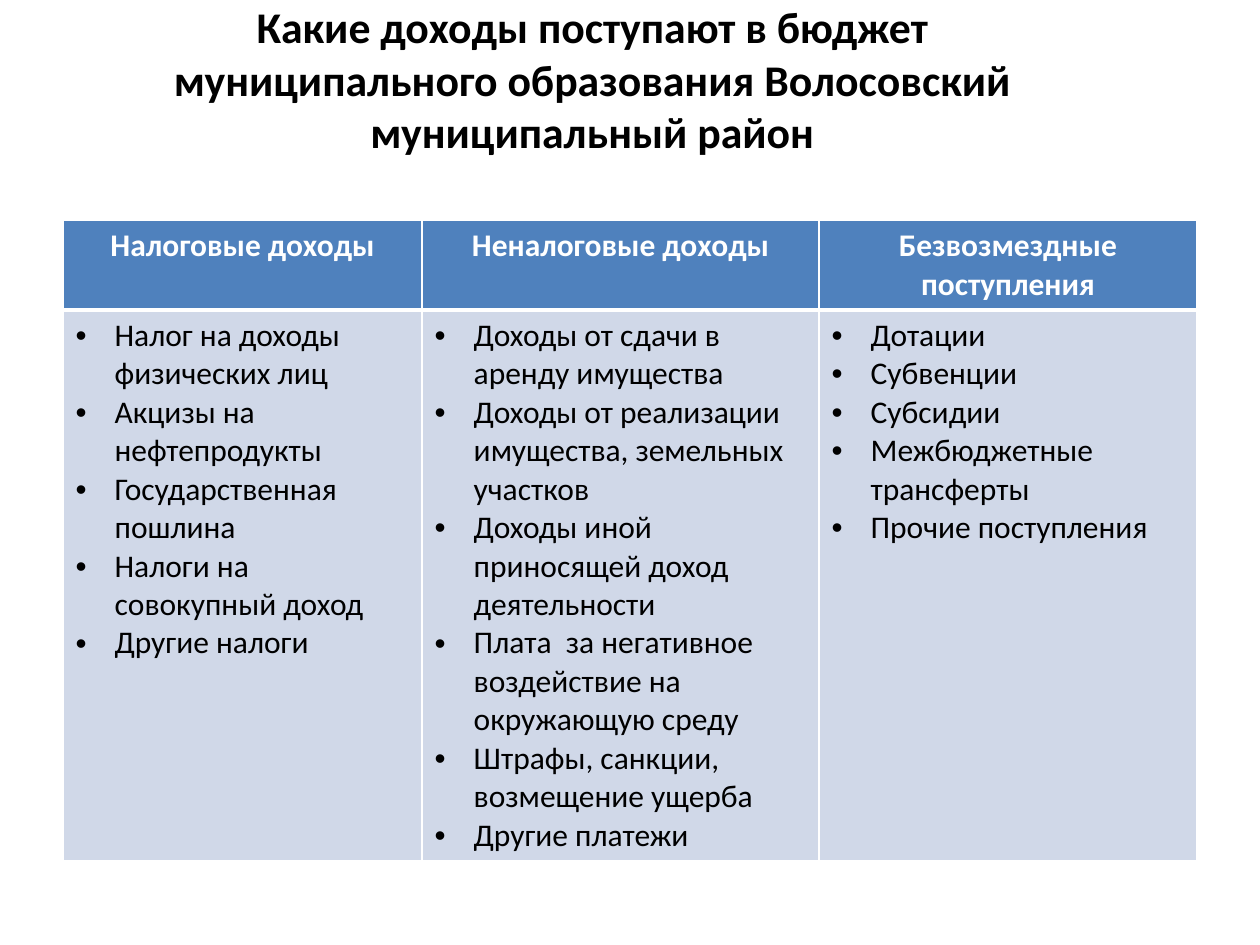
from lxml.etree import SubElement
from pptx import Presentation
from pptx.dml.color import RGBColor
from pptx.enum.text import MSO_ANCHOR, MSO_AUTO_SIZE, PP_ALIGN
from pptx.oxml.ns import qn
from pptx.util import Inches, Pt

FONT = "Calibri"
BLACK = RGBColor(0x00, 0x00, 0x00)
WHITE = RGBColor(0xFF, 0xFF, 0xFF)
BLUE = RGBColor(0x4F, 0x81, 0xBD)
PALE_BLUE = RGBColor(0xD0, 0xD8, 0xE8)

TITLE = ("Какие доходы поступают в бюджет\v"
         "муниципального образования Волосовский муниципальный район")
INCOME = {
    "Налоговые доходы": [
        "Налог на доходы физических лиц",
        "Акцизы на нефтепродукты",
        "Государственная пошлина",
        "Налоги на совокупный доход",
        "Другие налоги",
    ],
    "Неналоговые доходы": [
        "Доходы от сдачи в аренду имущества",
        "Доходы от реализации имущества, земельных участков",
        "Доходы иной приносящей доход деятельности",
        "Плата  за негативное воздействие на окружающую среду",
        "Штрафы, санкции, возмещение ущерба",
        "Другие платежи",
    ],
    "Безвозмездные поступления": [
        "Дотации",
        "Субвенции",
        "Субсидии",
        "Межбюджетные трансферты",
        "Прочие поступления",
    ],
}
COLUMN_WIDTHS = (2.85, 3.15, 3)
ROW_HEIGHTS = (0.7, 4.3)


def format_runs(para, size, color, bold):
    for span in para.runs:
        span.font.name = FONT
        span.font.size = Pt(size)
        span.font.bold = bold
        span.font.color.rgb = color


def add_bullet(para):
    props = para._p.get_or_add_pPr()
    props.set("marL", str(Inches(0.31)))
    props.set("indent", str(-Inches(0.31)))
    SubElement(props, qn("a:buFont"), typeface="Arial")
    SubElement(props, qn("a:buChar"), char="•")


def add_borders(cell, widths):
    props = cell._tc.get_or_add_tcPr()
    for side, width in widths.items():
        line = SubElement(props, qn(f"a:ln{side}"), w=str(Pt(width)))
        fill = SubElement(line, qn("a:solidFill"))
        SubElement(fill, qn("a:srgbClr"), val=str(WHITE))


def fill_cell(cell, color, borders):
    # Border lines must precede the fill in the cell properties
    add_borders(cell, borders)
    cell.fill.solid()
    cell.fill.fore_color.rgb = color


def place_title(page, left, top, width, height):
    title = page.shapes.title
    title.left, title.top, title.width, title.height = left, top, width, height
    frame = title.text_frame
    frame.text = TITLE
    frame.word_wrap = True
    frame.auto_size = MSO_AUTO_SIZE.NONE
    frame.vertical_anchor = MSO_ANCHOR.MIDDLE
    # A deep bottom margin lifts the heading away from the table
    frame.margin_bottom = Inches(0.47)
    para = frame.paragraphs[0]
    para.alignment = PP_ALIGN.CENTER
    format_runs(para, 25, BLACK, True)


def place_income_table(page, left, top, width, height):
    table = page.shapes.add_table(2, len(INCOME), left, top, width, height).table
    for column, size in zip(table.columns, COLUMN_WIDTHS):
        column.width = Inches(size)
    for row, size in zip(table.rows, ROW_HEIGHTS):
        row.height = Inches(size)

    for index, (heading, items) in enumerate(INCOME.items()):
        # Column heading
        head = table.cell(0, index)
        fill_cell(head, BLUE, {"L": 1, "R": 1, "T": 1, "B": 3})
        head.text_frame.text = heading
        para = head.text_frame.paragraphs[0]
        para.alignment = PP_ALIGN.CENTER
        format_runs(para, 18, WHITE, True)

        # Bulleted list of income sources
        body = table.cell(1, index)
        fill_cell(body, PALE_BLUE, {"L": 1, "R": 1, "T": 3, "B": 1})
        body.text_frame.text = "\n".join(items)
        for para in body.text_frame.paragraphs:
            add_bullet(para)
            format_runs(para, 18, BLACK, False)


def main():
    deck = Presentation()
    deck.slide_width, deck.slide_height = Inches(10), Inches(7.5)
    page = deck.slides.add_slide(deck.slide_layouts.get_by_name("Title Only"))
    place_title(page, Inches(0.2), Inches(0.29), Inches(9), Inches(1.09))
    place_income_table(page, Inches(0.5), Inches(1.75), Inches(9), Inches(5))
    deck.save("out.pptx")


if __name__ == "__main__":
    main()
